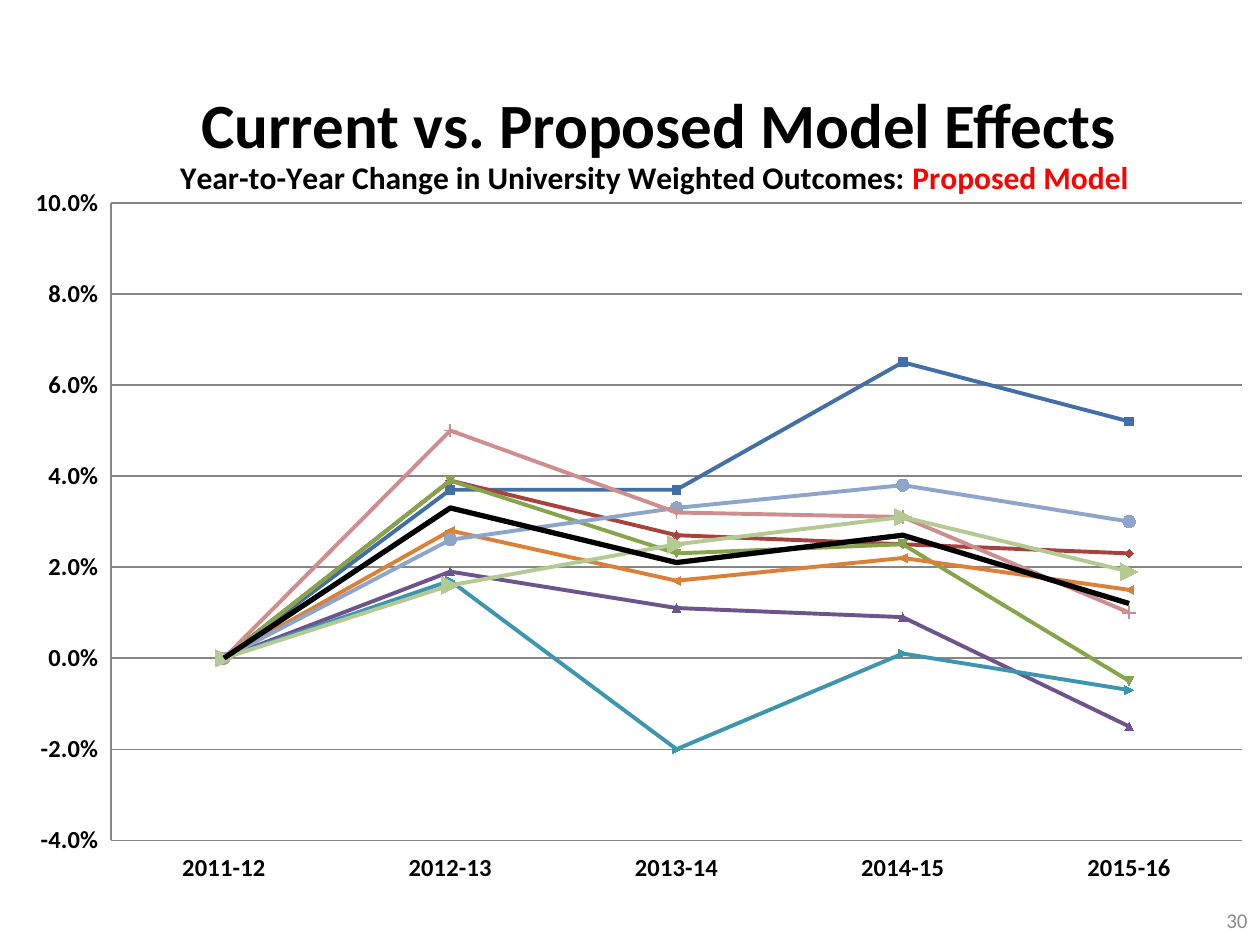
from lxml import etree
from pptx import Presentation
from pptx.chart.data import CategoryChartData
from pptx.dml.color import RGBColor
from pptx.enum.chart import XL_CHART_TYPE, XL_MARKER_STYLE, XL_TICK_LABEL_POSITION, XL_TICK_MARK
from pptx.enum.text import MSO_ANCHOR, PP_ALIGN
from pptx.oxml.ns import qn
from pptx.util import Cm, Pt

FONT = "Calibri"
COLORS = {
    "text": "000000", "accent": "FF0000", "muted": "8C8C8C", "grid": "868686",
    "blue": "416FA6", "red": "A8423F", "green": "86A44A", "purple": "6E548D",
    "teal": "3D96AE", "orange": "DA8137", "light_blue": "8EA5CB",
    "pink": "CE8E8D", "light_green": "B5CA92",
}
YEARS = ["2011-12", "2012-13", "2013-14", "2014-15", "2015-16"]
SERIES = [
    ("blue", [0, 0.037, 0.037, 0.065, 0.052], None, 5),
    ("red", [0, 0.039, 0.027, 0.025, 0.023], None, 5),
    ("green", [0, 0.039, 0.023, 0.025, -0.005], None, 5),
    ("purple", [0, 0.019, 0.011, 0.009, -0.015], None, 5),
    ("teal", [0, 0.017, -0.02, 0.001, -0.007], None, 5),
    ("orange", [0, 0.028, 0.017, 0.022, 0.015], None, 5),
    ("light_blue", [0, 0.026, 0.033, 0.038, 0.03], XL_MARKER_STYLE.CIRCLE, 7),
    ("pink", [0, 0.05, 0.032, 0.031, 0.01], XL_MARKER_STYLE.PLUS, 7),
    ("light_green", [0, 0.016, 0.025, 0.031, 0.019], XL_MARKER_STYLE.DOT, 10),
    ("text", [0, 0.033, 0.021, 0.027, 0.012], XL_MARKER_STYLE.NONE, 5),
]


def rgb(name):
    return RGBColor.from_string(COLORS[name])


def style_font(font, size, color="text", bold=False):
    font.name = FONT
    font.size = Pt(size)
    font.bold = bold
    font.color.rgb = rgb(color)


def add_text(tf, text, align=PP_ALIGN.CENTER, **fmt):
    p = tf.paragraphs[0]
    p.alignment = align
    r = p.add_run()
    r.text = text
    style_font(r.font, **fmt)


def set_line(line, color, width):
    line.color.rgb = rgb(color)
    line.width = Pt(width)


def set_layout(parent, **values):
    layout = parent.find(qn("c:layout"))
    if layout is None:
        layout = etree.Element(qn("c:layout"))
        parent.find(qn("c:tx")).addnext(layout)
    manual = etree.SubElement(layout, qn("c:manualLayout"))
    for tag, value in values.items():
        etree.SubElement(manual, qn(f"c:{tag}")).set("val", str(value))


def add_title(s):
    sp = s.shapes.title
    sp.left, sp.top, sp.width, sp.height = Cm(1.85), Cm(0.89), Cm(22.86), Cm(3.18)
    tf = sp.text_frame
    tf.vertical_anchor = MSO_ANCHOR.MIDDLE
    add_text(tf, "Current vs. Proposed Model Effects", size=36, bold=True)


def add_page_number(s):
    tf = s.shapes.add_textbox(Cm(19.48), Cm(18.03), Cm(5.92), Cm(1.02)).text_frame
    tf.word_wrap = True
    tf.vertical_anchor = MSO_ANCHOR.MIDDLE
    add_text(tf, "30", align=PP_ALIGN.RIGHT, size=12, color="muted")


def style_axis(axis):
    axis.major_tick_mark = axis.minor_tick_mark = XL_TICK_MARK.NONE
    axis.tick_label_position = XL_TICK_LABEL_POSITION.LOW
    style_font(axis.tick_labels.font, 14, bold=True)
    set_line(axis.format.line, "grid", 0.75)


def style_series(ser, color, marker, size):
    ser.smooth = False
    set_line(ser.format.line, color, 3 if color == "text" else 2.25)
    if marker is not None:
        ser.marker.style = marker
    if marker != XL_MARKER_STYLE.NONE:
        ser.marker.size = size
        ser.marker.format.fill.solid()
        ser.marker.format.fill.fore_color.rgb = rgb(color)
        set_line(ser.marker.format.line, color, 0.75)


def add_line_chart(s):
    data = CategoryChartData(number_format="0.0%")
    data.categories = YEARS
    for i, (_, values, _, _) in enumerate(SERIES, 1):
        data.add_series(f"Series {i}", values)
    chart = s.shapes.add_chart(XL_CHART_TYPE.LINE_MARKERS, Cm(0), Cm(2.77),
                               Cm(25.4), Cm(15.19), data).chart
    style_font(chart.font, 10)
    chart.has_legend = False
    plot = chart.plots[0]
    plot.vary_by_categories = False
    for ser, (color, _, marker, size) in zip(plot.series, SERIES):
        style_series(ser, color, marker, size)

    style_axis(chart.category_axis)
    axis = chart.value_axis
    style_axis(axis)
    axis.minimum_scale, axis.maximum_scale, axis.major_unit = -0.04, 0.1, 0.02
    axis.tick_labels.number_format = "0.0%"
    axis.tick_labels.number_format_is_linked = False
    set_line(axis.major_gridlines.format.line, "grid", 0.75)

    tf = chart.chart_title.text_frame
    add_text(tf, "Year-to-Year Change in University Weighted Outcomes: ", size=18, bold=True)
    add_text(tf, "Proposed Model", size=18, bold=True, color="accent")
    chart.chart_title.include_in_layout = False
    root = chart.element.find(qn("c:chart"))
    set_layout(root.find(qn("c:title")), xMode="edge", yMode="edge", x=0.14, y=0.02)
    area = root.find(qn("c:plotArea"))
    if area.find(qn("c:layout")) is None:
        area.insert(0, etree.Element(qn("c:layout")))
    set_layout(area, layoutTarget="inner", xMode="edge", yMode="edge",
               x=0.088, y=0.087, w=0.898, h=0.846)


def main():
    prs = Presentation()
    prs.slide_width, prs.slide_height = Cm(25.4), Cm(19.05)
    s = prs.slides.add_slide(prs.slide_layouts[5])
    add_title(s)
    add_page_number(s)
    add_line_chart(s)
    prs.save("out.pptx")


if __name__ == "__main__":
    main()
